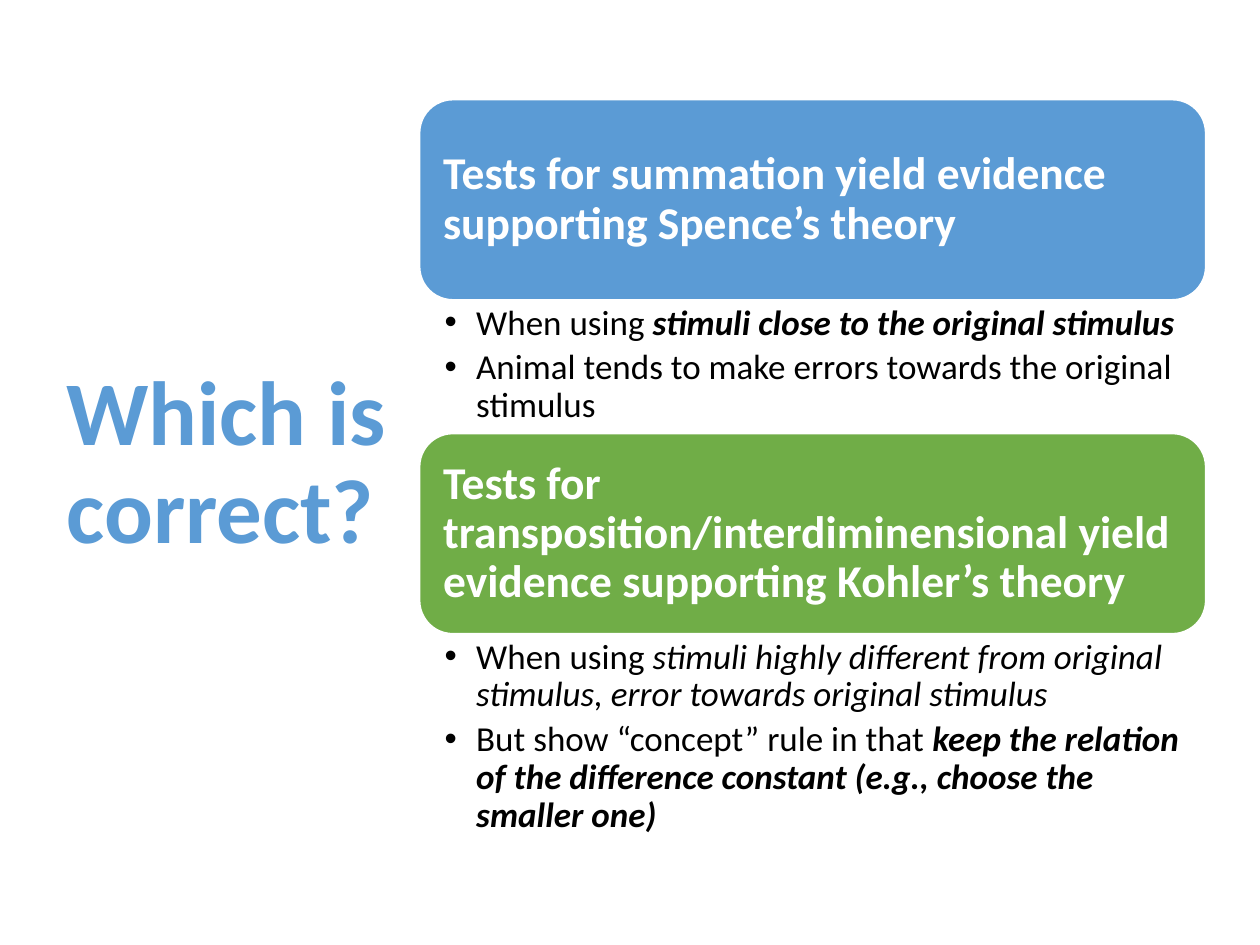
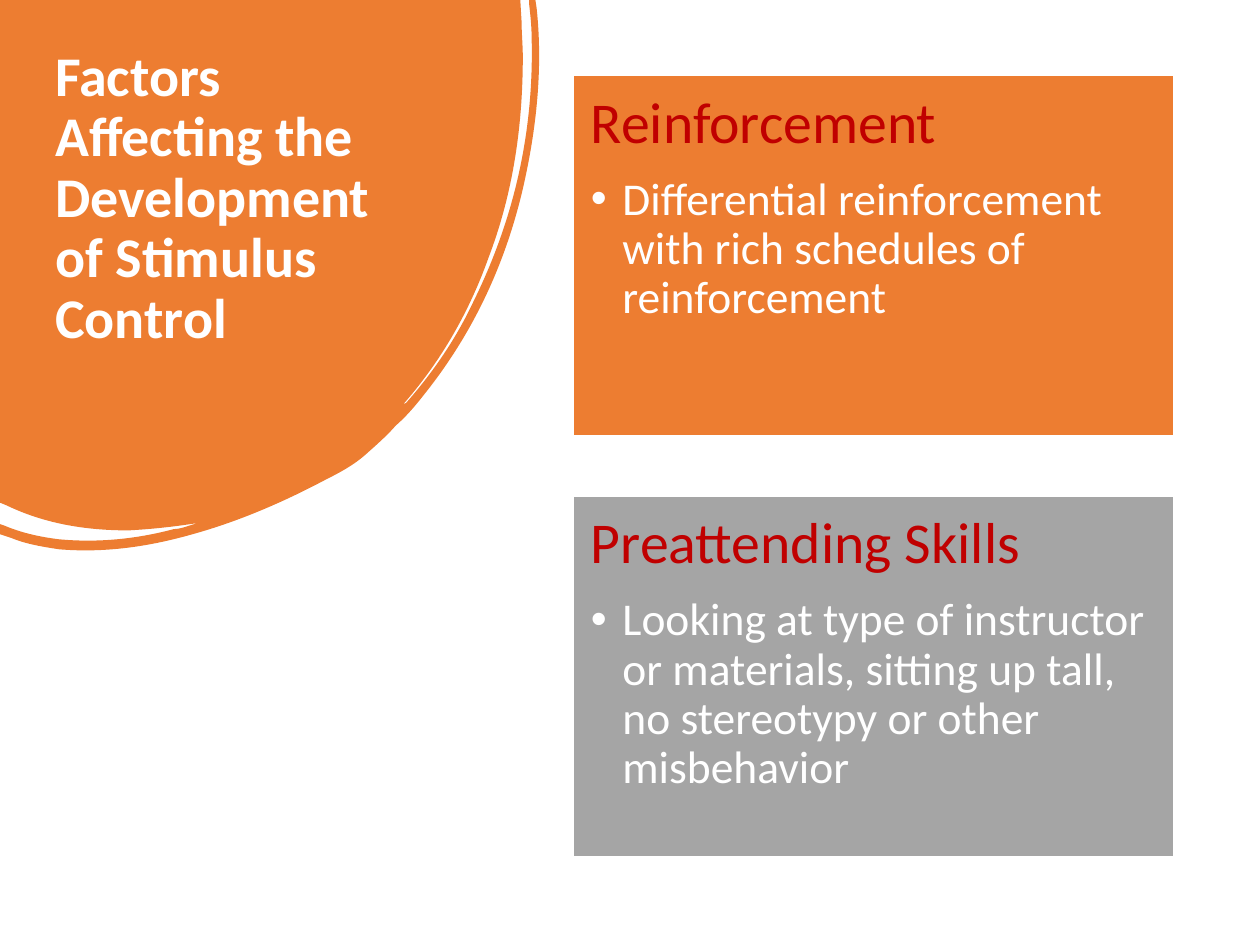
from lxml import etree
from pptx import Presentation
from pptx import util as u
from pptx.dml.color import RGBColor
from pptx.enum import shapes, text
from pptx.oxml.ns import qn

FONT = "Calibri"
BLUE = RGBColor(0x5B, 0x9B, 0xD5)
GREEN = RGBColor(0x70, 0xAD, 0x47)
ORANGE = RGBColor(0xED, 0x7D, 0x31)
GRAY = RGBColor(0xA5, 0xA5, 0xA5)
RED = RGBColor(0xC0, 0x00, 0x00)
WHITE = RGBColor(0xFF, 0xFF, 0xFF)
BLACK = RGBColor(0x00, 0x00, 0x00)
TOP, MIDDLE = text.MSO_ANCHOR.TOP, text.MSO_ANCHOR.MIDDLE
RECT, ROUND = shapes.MSO_SHAPE.RECTANGLE, shapes.MSO_SHAPE.ROUNDED_RECTANGLE
PLAIN, ITALIC, STRONG = {}, {"italic": True}, {"bold": True, "italic": True}


def add_box(slide, at, inset=(0.1, 0.05), anchor=TOP, kind=None, fill=None):
    """Add a text box, or a filled shape if kind is given; return its text frame."""
    at = [u.Inches(v) for v in at]
    if kind is None:
        sp = slide.shapes.add_textbox(*at)
    else:
        sp = slide.shapes.add_shape(kind, *at)
        sp.shadow.inherit = False
        sp.fill.solid()
        sp.fill.fore_color.rgb = fill
        sp.line.color.rgb = WHITE
        sp.line.width = u.Pt(1)
    tf = sp.text_frame
    dx, dy = (u.Inches(v) for v in inset)
    frame = {"word_wrap": True, "vertical_anchor": anchor, "margin_left": dx,
             "margin_right": dx, "margin_top": dy, "margin_bottom": dy}
    for name, value in frame.items():
        setattr(tf, name, value)
    return tf


def add_paragraph(tf, runs, size, color, after=0, bullet=False):
    """Write (text, format) runs; after is the space below as a share of the size."""
    p = tf.paragraphs[0] if not tf.paragraphs[0].runs else tf.add_paragraph()
    p.alignment = text.PP_ALIGN.LEFT
    p.line_spacing = 0.9
    p.space_after = u.Pt(size * after)
    if bullet:
        pPr = p._p.get_or_add_pPr()
        pPr.set("marL", str(u.Inches(0.25)))
        pPr.set("indent", str(-u.Inches(0.25)))
        etree.SubElement(pPr, qn("a:buFont"), typeface="Arial")
        etree.SubElement(pPr, qn("a:buChar"), char="•")
    for words, style in runs:
        r = p.add_run()
        r.text = words
        r.font.color.rgb = color
        for name, value in {"name": FONT, "size": u.Pt(size), **style}.items():
            setattr(r.font, name, value)


prs = Presentation()
prs.slide_width, prs.slide_height = u.Inches(10), u.Inches(7.5)
blank = prs.slide_layouts[6]

# Slide 1: two rounded claims, each followed by its evidence
slide = prs.slides.add_slide(blank)
tf = add_box(slide, (0.43, 0.68, 3.12, 6.02), anchor=MIDDLE)
add_paragraph(tf, [("Which is correct?", {"bold": True})], 52, BLUE)

claims = [
    (BLUE, "Tests for summation yield evidence supporting Spence’s theory", 1.06, [
        [("When using ", PLAIN), ("stimuli close to the original stimulus", STRONG)],
        [("Animal tends to make errors towards the original stimulus", PLAIN)],
    ]),
    (GREEN, "Tests for transposition/interdiminensional yield evidence "
            "supporting Kohler’s theory", 1.68, [
        [("When using ", PLAIN),
         ("stimuli highly different from original stimulus, "
          "error towards original stimulus", ITALIC)],
        [("But show “concept” rule in that ", PLAIN),
         ("keep the relation of the difference constant "
          "(e.g., choose the smaller one)", STRONG)],
    ]),
]
left, y, width, claim_h = 3.33, 0.79, 6.24, 1.59
for fill, claim, evidence_h, evidence in claims:
    tf = add_box(slide, (left, y, width, claim_h), (0.11, 0.11), MIDDLE, ROUND, fill)
    add_paragraph(tf, [(claim, {"bold": True})], 26, WHITE)
    y += claim_h
    tf = add_box(slide, (left, y, width, evidence_h), (0.2, 0.04))
    for runs in evidence:
        add_paragraph(tf, runs, 20, BLACK, 0.2, bullet=True)
    y += evidence_h

# Slide 2: brushed corner behind the title, two factor cards
slide = prs.slides.add_slide(blank)

# Outline in hundredths of an inch: a pair ends a line, six numbers make a Bézier curve
outline = [
    (413, 0), (414, 17),
    (414, 26, 415, 36, 415, 45), (415, 101, 407, 154, 388, 204),
    (372, 249, 349, 288, 320, 321), (322, 321, 323, 319, 324, 318),
    (344, 295, 362, 269, 376, 239), (407, 176, 424, 107, 422, 30),
    (422, 21, 421, 12, 420, 3), (420, 0), (425, 0), (426, 7),
    (431, 54, 426, 102, 415, 150), (400, 214, 373, 268, 336, 314),
    (329, 323, 322, 331, 314, 338), (307, 346, 299, 353, 290, 361),
    (281, 369, 270, 375, 258, 381), (224, 399, 189, 414, 153, 424),
    (118, 434, 83, 439, 47, 436), (34, 434, 21, 432, 9, 427),
    (0, 424), (0, 416), (3, 417),
    (17, 423, 31, 426, 46, 428), (77, 431, 108, 428, 138, 420),
    (141, 420, 145, 419, 148, 418), (151, 417, 154, 416, 158, 415),
    (139, 418, 121, 420, 102, 421), (69, 421, 36, 416, 5, 401),
    (0, 399),
]
builder = slide.shapes.build_freeform(0, 0, scale=u.Inches(0.01))
builder.add_line_segments([part[-2:] for part in outline], close=True)
corner = builder.convert_to_shape()
corner.shadow.inherit = False
corner.fill.solid()
corner.fill.fore_color.rgb = ORANGE
corner.line.fill.background()
for line, part in zip(list(corner._element.iter(qn("a:lnTo"))), outline):
    if len(part) == 6:
        curve = etree.Element(qn("a:cubicBezTo"))
        for px, py in zip(part[::2], part[1::2]):
            etree.SubElement(curve, qn("a:pt"), x=str(px), y=str(py))
        line.getparent().replace(line, curve)

tf = add_box(slide, (0.34, 0.33, 3, 2.62))
add_paragraph(tf, [("Factors Affecting the Development of Stimulus Control",
                    {"bold": True})], 32, WHITE)

factors = [
    (ORANGE, "Reinforcement",
     "Differential reinforcement with rich schedules of reinforcement"),
    (GRAY, "Preattending Skills",
     "Looking at type of instructor or materials, sitting up tall, "
     "no stereotypy or other misbehavior"),
]
card_h, gap = 2.86, 0.48
for row, (fill, factor, detail) in enumerate(factors):
    at = (4.55, 0.6 + row * (card_h + gap), 4.77, card_h)
    tf = add_box(slide, at, (0.14, 0.14), TOP, RECT, fill)
    add_paragraph(tf, [(factor, PLAIN)], 33, RED, 0.35)
    add_paragraph(tf, [(detail, PLAIN)], 26, WHITE, 0.15, bullet=True)

prs.save("out.pptx")
